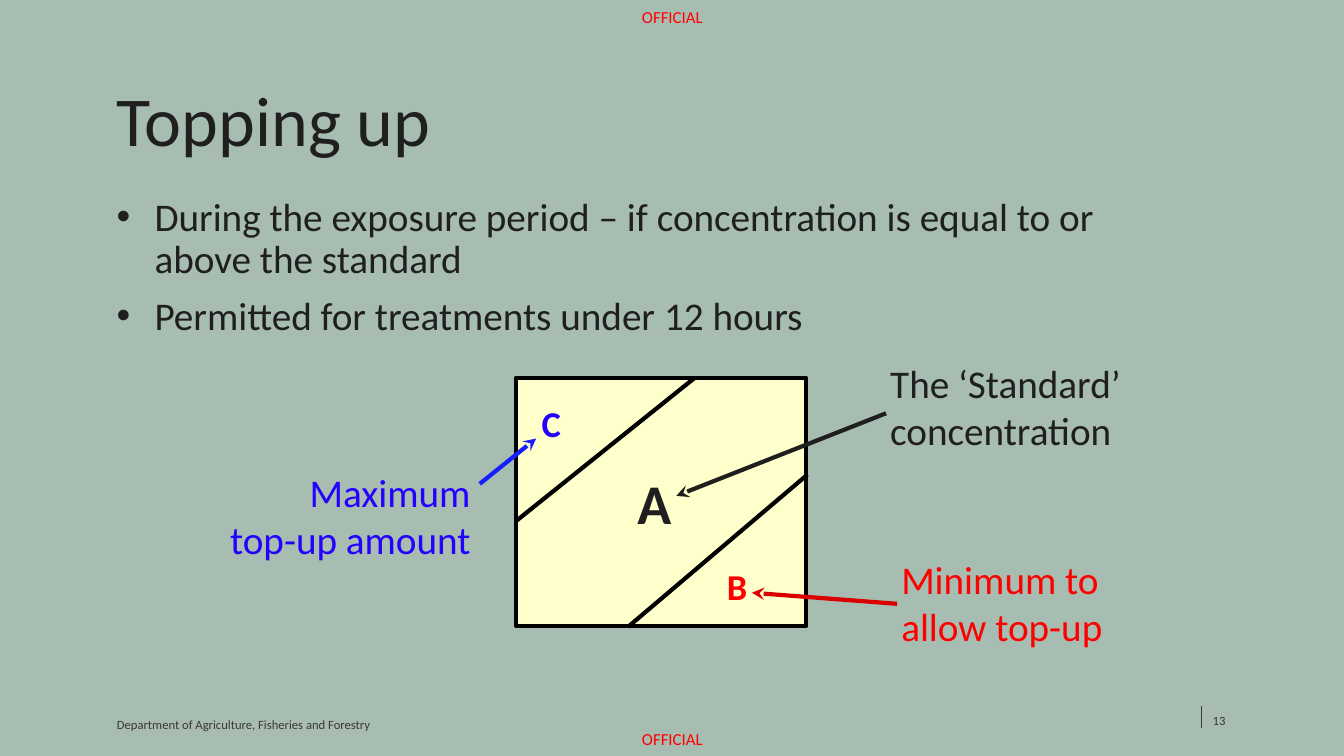
from dataclasses import dataclass

from lxml import etree
from pptx import Presentation
from pptx.dml.color import RGBColor
from pptx.enum import shapes, text
from pptx.oxml import ns
from pptx.util import Pt

SAGE = RGBColor(0xA7, 0xBD, 0xB1)
INK = RGBColor(0x1F, 0x1F, 0x1F)
BROWN = RGBColor(0x3C, 0x38, 0x33)
BLACK = RGBColor(0, 0, 0)
CREAM = RGBColor(0xFF, 0xFF, 0xCC)
RED = RGBColor(0xFF, 0, 0)
DARK_RED = RGBColor(0xDB, 0, 0)
BLUE = RGBColor(0x24, 0, 0xFF)
LETTER_BLUE = RGBColor(0x23, 0, 0xFF)
ARROW_BLUE = RGBColor(0x18, 0x1F, 0xFF)

FONT = "Calibri"
LEFT, TOP = text.PP_ALIGN.LEFT, text.MSO_ANCHOR.TOP
BOTTOM = text.MSO_ANCHOR.BOTTOM
INDENT = 27


@dataclass
class Label:
    """A text box; the box is left, top, width, height in points."""
    box: tuple[float, float, float, float]
    lines: list[str]
    size: float
    color: RGBColor
    bold: bool = False
    wrap: bool = False
    align: text.PP_ALIGN = LEFT
    anchor: text.MSO_ANCHOR = TOP
    side_margin: float = 0
    spacing: Pt | float | None = None
    fill: RGBColor | None = None


@dataclass
class Line:
    start: tuple[float, float]
    end: tuple[float, float]
    color: RGBColor = BLACK
    width: float = 3
    arrow: bool = False


MARGIN_LABELS = [
    Label((866.2, 502.6, 47.5, 17.3), ["13"], 9, BROWN,
          anchor=BOTTOM, spacing=Pt(10)),
    Label((83.5, 502.6, 258.5, 20), ["Department of Agriculture, Fisheries and Forestry"],
          9, BROWN, anchor=BOTTOM, spacing=Pt(10)),
    *(Label((458.6, top, 46.1, 14.4), ["OFFICIAL"], 12, RED) for top in (5, 520.6)),
]

ZONE_LETTERS = [
    Label(box, [letter], size, color, bold=True, side_margin=3, fill=CREAM)
    for letter, box, size, color in (
        ("A", (452.2, 334.8, 31, 48.2), 40, INK),
        ("C", (383.8, 286.6, 20.2, 31.7), 26, LETTER_BLUE),
        ("B", (516.2, 403.2, 20.9, 31.7), 26, RED),
    )
]

CALLOUTS = [
    Label((632.9, 256.3, 184.3, 61.2), ["The ‘Standard’ concentration"], 28, INK,
          wrap=True, side_margin=3),
    Label((640.8, 396.7, 169.9, 55.4), ["Minimum to allow top-up"], 28, RED,
          wrap=True, side_margin=3),
    Label((155.5, 334.8, 183.6, 67.7), ["Maximum", "top-up amount"], 28, BLUE,
          align=text.PP_ALIGN.RIGHT, side_margin=3),
]

FOOTER_DIVIDER = Line((858.2, 519.8), (858.2, 504), BROWN, 0.5)
ZONE_BORDERS = [
    Line((368.6, 372.2), (496.1, 270)),
    Line((448.6, 447.8), (576.7, 339.1)),
]
ARROWS = [
    Line((483.1, 354.2), (632.9, 295.2), INK, arrow=True),
    Line((537.1, 423.4), (640.8, 431.3), DARK_RED, arrow=True),
    Line((383, 313.2), (342.7, 345.6), ARROW_BLUE, arrow=True),
]


def add_run(paragraph, content: str, size: float, color: RGBColor, bold: bool = False) -> None:
    run = paragraph.add_run()
    run.text = content
    run.font.name = FONT
    run.font.size = Pt(size)
    run.font.bold = bold
    run.font.color.rgb = color


def add_label(slide, label: Label):
    shape = slide.shapes.add_textbox(*map(Pt, label.box))
    if label.fill is not None:
        shape.fill.solid()
        shape.fill.fore_color.rgb = label.fill
    frame = shape.text_frame
    frame.word_wrap = label.wrap
    frame.vertical_anchor = label.anchor
    frame.margin_left = frame.margin_right = Pt(label.side_margin)
    frame.margin_top = frame.margin_bottom = 0
    for index, content in enumerate(label.lines):
        paragraph = frame.add_paragraph() if index else frame.paragraphs[0]
        paragraph.alignment = label.align
        paragraph.line_spacing = label.spacing
        add_run(paragraph, content, label.size, label.color, label.bold)
    return shape


def add_line(slide, line: Line) -> None:
    connector = slide.shapes.add_connector(
        shapes.MSO_CONNECTOR.STRAIGHT, *map(Pt, line.start + line.end))
    connector.line.color.rgb = line.color
    connector.line.width = Pt(line.width)
    if line.arrow:
        etree.SubElement(connector.line._get_or_add_ln(), ns.qn("a:headEnd"), type="stealth")
    etree.SubElement(connector._element.spPr, ns.qn("a:effectLst"))


def add_title(slide) -> None:
    title = slide.shapes.title
    title.left, title.top, title.width, title.height = map(Pt, (76.3, 57.6, 854.6, 72))
    frame = title.text_frame
    frame.auto_size = text.MSO_AUTO_SIZE.NONE
    frame.vertical_anchor = TOP
    paragraph = frame.paragraphs[0]
    paragraph.alignment = LEFT
    paragraph.line_spacing = 0.9
    add_run(paragraph, "Topping up", 50, INK)


def add_bullets(slide) -> None:
    label = Label(
        (76.3, 137.5, 763.2, 306.7),
        ["During the exposure period – if concentration is equal to or above the standard",
         "Permitted for treatments under 12 hours"],
        28, INK, wrap=True, side_margin=7.2, spacing=0.9)
    frame = add_label(slide, label).text_frame
    frame.margin_top = frame.margin_bottom = Pt(3.6)
    for paragraph in frame.paragraphs:
        paragraph.space_before = Pt(10)
        properties = paragraph._p.get_or_add_pPr()
        properties.set("marL", str(Pt(INDENT)))
        properties.set("indent", str(-Pt(INDENT)))
        etree.SubElement(properties, ns.qn("a:buFont"), typeface="Arial")
        etree.SubElement(properties, ns.qn("a:buChar"), char="•")


def add_zone_panel(slide) -> None:
    panel = slide.shapes.add_shape(
        shapes.MSO_SHAPE.RECTANGLE, *map(Pt, (368.6, 270, 207.4, 177.1)))
    panel.shadow.inherit = False
    panel.fill.solid()
    panel.fill.fore_color.rgb = CREAM
    panel.line.color.rgb = BLACK
    panel.line.width = Pt(3)


def main() -> None:
    presentation = Presentation()
    presentation.slide_width, presentation.slide_height = Pt(960), Pt(540)
    slide = presentation.slides.add_slide(presentation.slide_layouts[5])
    slide.background.fill.solid()
    slide.background.fill.fore_color.rgb = SAGE

    add_title(slide)
    add_line(slide, FOOTER_DIVIDER)
    for label in MARGIN_LABELS:
        add_label(slide, label)
    add_bullets(slide)
    add_zone_panel(slide)
    for border in ZONE_BORDERS:
        add_line(slide, border)
    for label in ZONE_LETTERS + CALLOUTS:
        add_label(slide, label)
    for arrow in ARROWS:
        add_line(slide, arrow)

    presentation.save("out.pptx")


if __name__ == "__main__":
    main()
